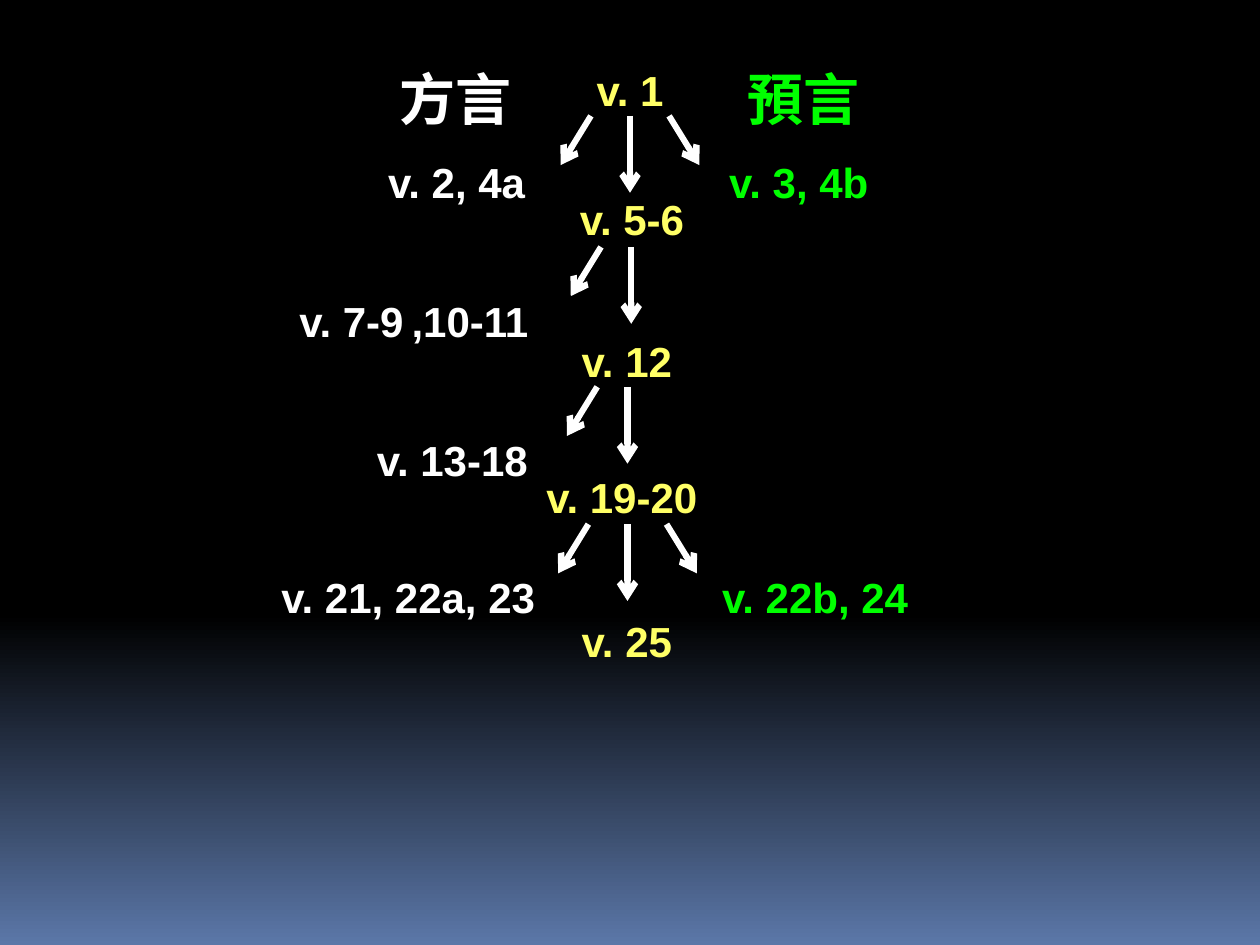
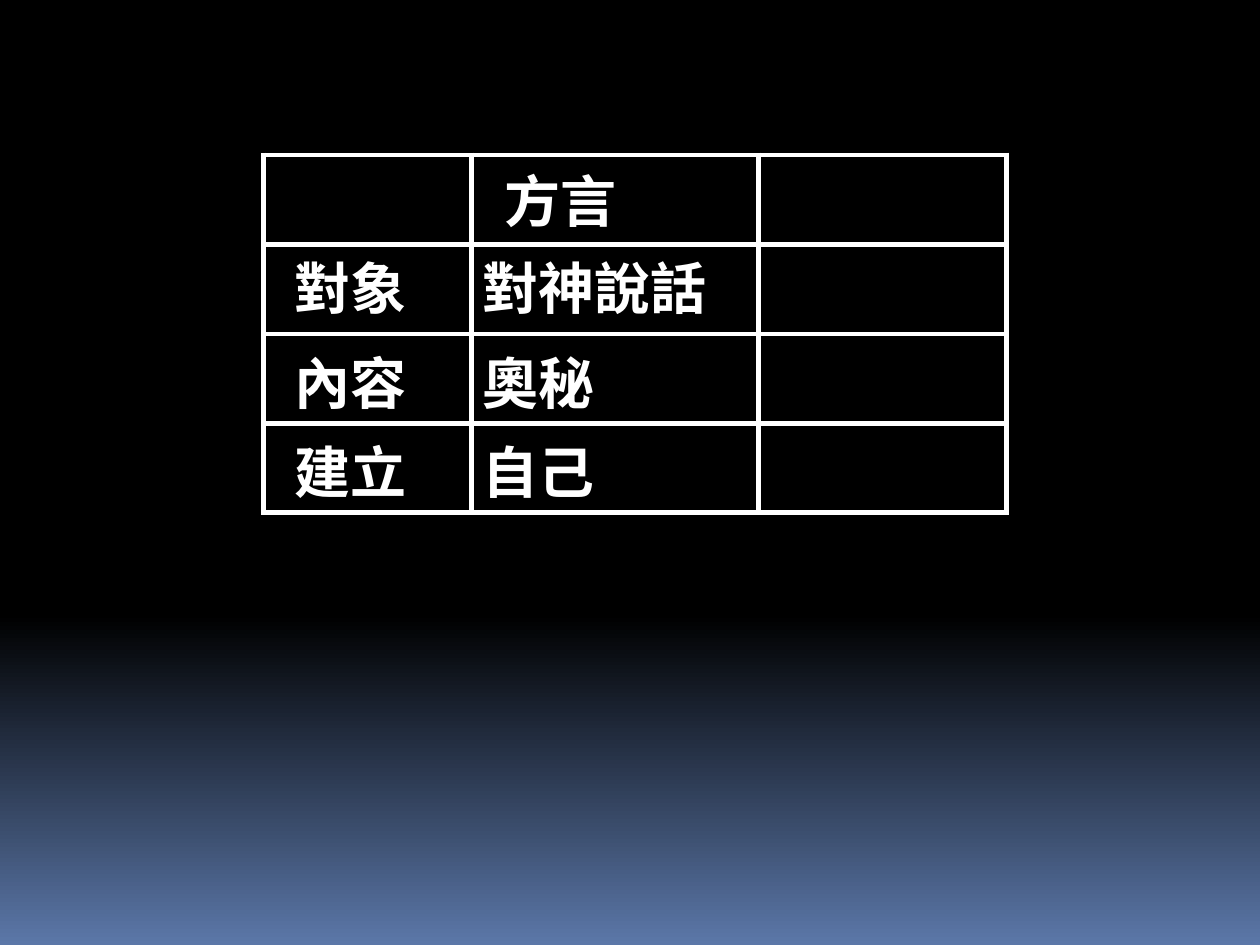
from lxml import etree
from pptx import Presentation
from pptx.dml.color import RGBColor
from pptx.enum.shapes import MSO_CONNECTOR
from pptx.enum.text import MSO_AUTO_SIZE, PP_ALIGN
from pptx.oxml.ns import qn
from pptx.util import Inches, Pt

CENTER, LEFT = PP_ALIGN.CENTER, PP_ALIGN.LEFT
GROW = MSO_AUTO_SIZE.SHAPE_TO_FIT_TEXT
STRAIGHT = MSO_CONNECTOR.STRAIGHT

FONT = "Arial"
BLACK, BLUE = "000000", "5B77A8"
WHITE, YELLOW, GREEN = "FFFFFF", "FFFF66", "00FF00"
BIG, SMALL = 32, 24
HEIGHT = {BIG: 0.67, SMALL: 0.53}

# text, left, top, width
HEADS = [("方言", 3.03, 0.44, 1.17, WHITE), ("預言", 5.79, 0.44, 1.18, GREEN)]
VERSES = {
    YELLOW: [
        ("v. 1", 4.53, 0.44, 0.94),
        ("v. 5-6", 4.19, 1.47, 1.65),
        ("v. 12", 4.15, 2.59, 1.65),
        ("v. 19-20", 4.11, 3.67, 1.65),
        ("v. 25", 4.15, 4.82, 1.65),
    ],
    WHITE: [
        ("v. 2, 4a", 2.56, 1.17, 2.13),
        ("v. 7-9", 1.46, 2.28, 2.66),
        (",10-11", 2.48, 2.28, 2.5),
        ("v. 13-18", 2.24, 3.38, 2.7),
        ("v. 21, 22a, 23", 1.85, 4.47, 2.78),
    ],
    GREEN: [
        ("v. 3, 4b", 5.16, 1.17, 2.36),
        ("v. 22b, 24", 5.1, 4.47, 2.74),
    ],
}
# middle x, top y, gap to the side arrows, sides (-1 left, 1 right)
FORKS = [
    (5.0, 0.92, 0.31, (-1, 1)),
    (5.01, 1.96, 0.24, (-1,)),
    (4.98, 3.07, 0.24, (-1,)),
    (4.98, 4.16, 0.31, (-1, 1)),
]
DROP, LEAN, FALL = 0.61, 0.24, 0.39

GRID = (2.09, 1.23)
COLS, ROWS, ROW_H = (1.65, 2.28, 1.97), 4, 0.71
TOPIC = ("方言", 3.91, 1.25, 1.5)
POINTS = [
    (("對象", "對神說話"), 1.94),
    (("內容", "奧秘"), 2.69),
    (("建立", "自己"), 3.4),
]
POINT_X, POINT_W, TAB = 2.24, 4.88, 1.49


def rgb(code):
    return RGBColor.from_string(code)


def paint_back(master):
    fill = master.background.fill
    fill.gradient()
    fill.gradient_angle = 270
    for stop, code, place in zip(fill.gradient_stops, (BLACK, BLUE), (0.65, 1)):
        stop.color.rgb = rgb(code)
        stop.position = place


def add_text(slide, text, x, y, w, color, size, align=CENTER):
    box = slide.shapes.add_textbox(*map(Inches, (x, y, w, HEIGHT[size])))
    frame = box.text_frame
    frame.word_wrap = True
    frame.auto_size = GROW
    frame.text = text
    para = frame.paragraphs[0]
    para.alignment = align
    para.line_spacing = 1.05
    for run in para.runs:
        font = run.font
        font.name, font.size, font.bold = FONT, Pt(size), True
        font.color.rgb = rgb(color)
    return para


def set_tab(para, pos):
    tabs = etree.SubElement(para._p.get_or_add_pPr(), qn("a:tabLst"))
    etree.SubElement(tabs, qn("a:tab"), pos=str(Inches(pos)), algn="l")


def add_arrow(slide, *ends):
    arrow = slide.shapes.add_connector(STRAIGHT, *map(Inches, ends))
    arrow.line.color.rgb = rgb(WHITE)
    arrow.line.width = Pt(3.5)
    etree.SubElement(arrow.line._get_or_add_ln(), qn("a:tailEnd"), type="arrow")
    etree.SubElement(arrow._element.spPr, qn("a:effectLst"))


def add_fork(slide, x, y, gap, sides):
    add_arrow(slide, x, y, x, y + DROP)
    for side in sides:
        start = x + side * gap
        add_arrow(slide, start, y, start + side * LEAN, y + FALL)


def frame_cell(cell):
    """Give the cell white borders and no fill."""
    props = cell._tc.get_or_add_tcPr()
    for edge in "LRTB":
        line = etree.SubElement(props, qn("a:ln" + edge), w=str(Pt(3)))
        solid = etree.SubElement(line, qn("a:solidFill"))
        etree.SubElement(solid, qn("a:srgbClr"), val=WHITE)
    cell.fill.background()


def add_grid(slide):
    size = sum(COLS), ROWS * ROW_H
    table = slide.shapes.add_table(
        ROWS, len(COLS), *map(Inches, GRID + size)).table
    table.first_row = table.horz_banding = False
    for col, width in zip(table.columns, COLS):
        col.width = Inches(width)
    for row in table.rows:
        row.height = Inches(ROW_H)
    for cell in table.iter_cells():
        frame_cell(cell)


def draw_flow(slide):
    for *spot, color in HEADS:
        add_text(slide, *spot, color, BIG)
    for color, verses in VERSES.items():
        for verse in verses:
            add_text(slide, *verse, color, SMALL)
    for fork in FORKS:
        add_fork(slide, *fork)


def draw_table(slide):
    add_grid(slide)
    add_text(slide, *TOPIC, WHITE, BIG, LEFT)
    for pair, y in POINTS:
        para = add_text(slide, "\t".join(pair), POINT_X, y, POINT_W,
                        WHITE, BIG, LEFT)
        set_tab(para, TAB)


def main():
    prs = Presentation()
    prs.slide_width, prs.slide_height = Inches(10), Inches(7.5)
    paint_back(prs.slide_master)
    blank = prs.slide_layouts[6]
    for draw in (draw_flow, draw_table):
        draw(prs.slides.add_slide(blank))
    prs.save("out.pptx")


if __name__ == "__main__":
    main()
